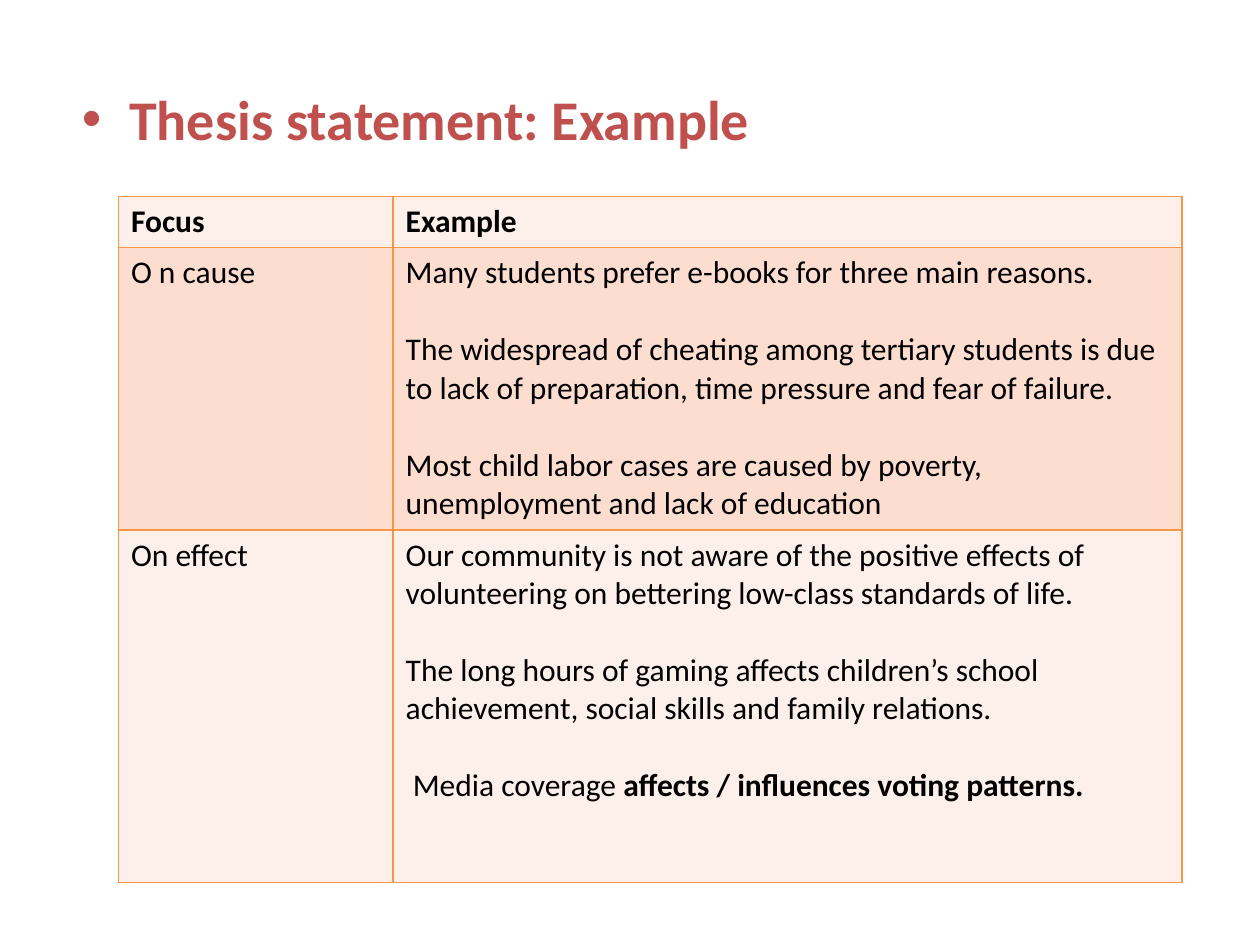
from lxml.etree import SubElement
from pptx import Presentation
from pptx.dml.color import RGBColor
from pptx.oxml.ns import qn
from pptx.util import Inches, Pt

FONT = "Calibri"
HEADING_RED = RGBColor(0xC0, 0x50, 0x4D)
BLACK = RGBColor(0x00, 0x00, 0x00)
BORDER_ORANGE = RGBColor(0xF7, 0x96, 0x46)
LIGHT_PEACH = RGBColor(0xFD, 0xEF, 0xE9)
DARK_PEACH = RGBColor(0xFC, 0xDD, 0xCF)

COLUMN_WIDTHS = (2.18, 6.26)
ROW_HEIGHTS = (0.4, 2.24, 2.8)
LINE_GAP = 22  # one line of 18 pt text

# Each cell is a list of paragraphs, each paragraph a list of (text, bold) runs
ROWS = [
    ([[("Focus", True)]], [[("Example", True)]]),
    (
        [[("O n cause", False)]],
        [
            [("Many students prefer e-books for three main reasons.", False)],
            [("The widespread of cheating among tertiary students is due to lack "
              "of preparation, time pressure and fear of failure.", False)],
            [("Most child labor cases are caused by poverty, unemployment and "
              "lack of education", False)],
        ],
    ),
    (
        [[("On effect", False)]],
        [
            [("Our community is not aware of the positive effects of volunteering "
              "on bettering low-class standards of life.", False)],
            [("The long hours of gaming affects children’s school achievement, "
              "social skills and family relations.", False)],
            [(" Media coverage ", False),
             ("affects / influences voting patterns.", True)],
        ],
    ),
]


def add_text(paragraph, text, size=18, color=BLACK, bold=False):
    run = paragraph.add_run()
    run.text = text
    run.font.name = FONT
    run.font.size = Pt(size)
    run.font.bold = bold
    run.font.color.rgb = color


def add_heading(slide):
    # The layout's body placeholder supplies the bullet and hanging indent
    body = slide.placeholders[1]
    body.left, body.top = Inches(0.55), Inches(0.62)
    body.width, body.height = Inches(9), Inches(6.48)
    add_text(body.text_frame.paragraphs[0], "Thesis statement: Example",
             size=32, color=HEADING_RED, bold=True)


def set_borders(cell, color, width):
    properties = cell._tc.get_or_add_tcPr()
    for side in ("a:lnL", "a:lnR", "a:lnT", "a:lnB"):
        line = SubElement(properties, qn(side), w=str(Pt(width)))
        fill = SubElement(line, qn("a:solidFill"))
        SubElement(fill, qn("a:srgbClr"), val=str(color))


def fill_cell(cell, paragraphs, color):
    # Borders come before the fill in the cell properties
    set_borders(cell, BORDER_ORANGE, 1)
    cell.fill.solid()
    cell.fill.fore_color.rgb = color
    frame = cell.text_frame
    for index, runs in enumerate(paragraphs):
        paragraph = frame.add_paragraph() if index else frame.paragraphs[0]
        if index:
            paragraph.space_before = Pt(LINE_GAP)
        for text, bold in runs:
            add_text(paragraph, text, bold=bold)


def add_example_table(slide):
    table = slide.shapes.add_table(
        len(ROW_HEIGHTS), len(COLUMN_WIDTHS), Inches(0.94), Inches(1.56),
        Inches(sum(COLUMN_WIDTHS)), Inches(sum(ROW_HEIGHTS))).table
    for column, width in zip(table.columns, COLUMN_WIDTHS):
        column.width = Inches(width)
    for index, (row, height) in enumerate(zip(table.rows, ROW_HEIGHTS)):
        row.height = Inches(height)
        color = DARK_PEACH if index % 2 else LIGHT_PEACH
        for cell, paragraphs in zip(row.cells, ROWS[index]):
            fill_cell(cell, paragraphs, color)


def main():
    presentation = Presentation()
    presentation.slide_width = Inches(10)
    presentation.slide_height = Inches(7.5)

    # The heading is a bullet in the body, so the title placeholder is removed
    slide = presentation.slides.add_slide(presentation.slide_layouts[1])
    title = slide.shapes.title.element
    title.getparent().remove(title)

    add_heading(slide)
    add_example_table(slide)
    presentation.save("out.pptx")


if __name__ == "__main__":
    main()
